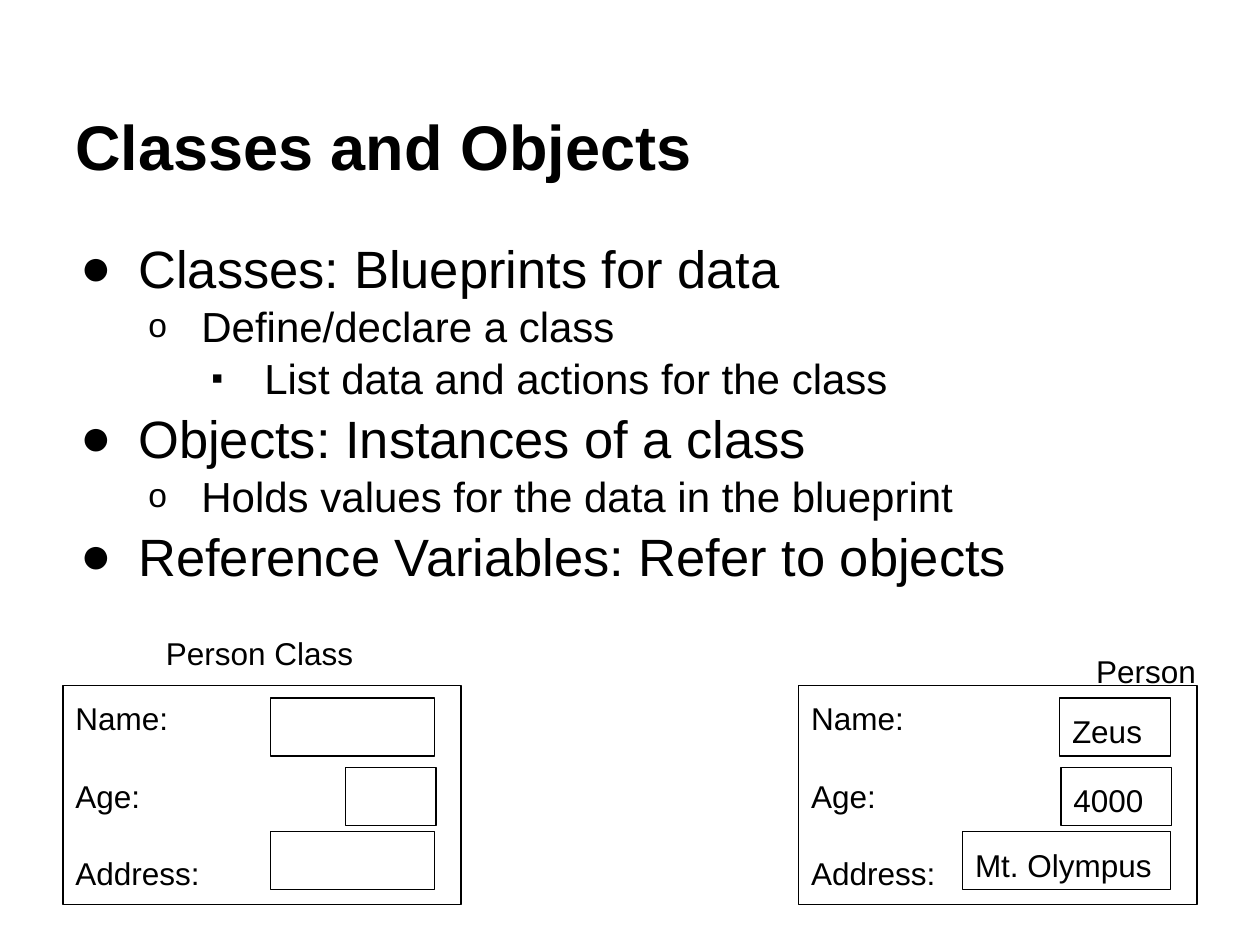
from dataclasses import dataclass
from typing import Optional

from lxml.etree import SubElement
from pptx import Presentation
from pptx.dml.color import RGBColor
from pptx.enum.shapes import MSO_SHAPE
from pptx.enum.text import MSO_ANCHOR, PP_ALIGN
from pptx.oxml.ns import qn
from pptx.util import Inches, Pt


@dataclass(frozen=True)
class Theme:
    font: str = "Arial"
    ink: RGBColor = RGBColor(0, 0, 0)
    title: int = 36
    topic: int = 30
    detail: int = 24
    label: int = 18
    outline: float = 0.75
    line_spacing: float = 1.04
    inset: float = 0.1


@dataclass(frozen=True)
class Bullet:
    glyph: str
    left: float
    hanging: float
    size: int
    percent: int = 100


@dataclass(frozen=True)
class Field:
    left: float
    width: float
    value: str = ""


@dataclass(frozen=True)
class Card:
    left: float
    caption: str
    caption_box: tuple[float, float, float, float]
    fields: tuple[Field, ...]


THEME = Theme()
BULLETS = (
    Bullet("●", 0.5, 0.46, THEME.topic),
    Bullet("o", 1.0, 0.42, THEME.detail, 80),
    Bullet("▪", 1.5, 0.42, THEME.detail, 80),
)
OUTLINE = (
    (0, "Classes: Blueprints for data"),
    (1, "Define/declare a class"),
    (2, "List data and actions for the class"),
    (0, "Objects: Instances of a class"),
    (1, "Holds values for the data in the blueprint"),
    (0, "Reference Variables: Refer to objects"),
)
FIELD_NAMES = ("Name:", "Age:", "Address:")
FIELD_TOPS = (5.54, 6.09, 6.6)
FIELD_HEIGHT = 0.46
CARD_TOP, CARD_WIDTH, CARD_HEIGHT = 5.44, 3.16, 1.74
CARDS = (
    Card(0.5, "Person Class", (0.66, 4.92, 2.8, 0.53),
         (Field(2.15, 1.3), Field(2.74, 0.72), Field(2.15, 1.3))),
    Card(6.34, "Person", (8.6, 5.06, 0.99, 0.53),
         (Field(8.41, 0.88, "Zeus"), Field(8.42, 0.88, "4000"),
          Field(7.64, 1.65, "Mt. Olympus"))),
)


def prepare_frame(frame, anchor=MSO_ANCHOR.TOP) -> None:
    frame.word_wrap = True
    frame.vertical_anchor = anchor
    frame.margin_left = frame.margin_right = Inches(THEME.inset)
    frame.margin_top = frame.margin_bottom = Inches(THEME.inset)


def write(frame, text: str, *, size: int = THEME.label, bold: bool = False,
          align=PP_ALIGN.LEFT, gap: float = 0, bullet: Optional[Bullet] = None) -> None:
    """Fill the empty first paragraph, or append a further one."""
    first = frame.paragraphs[0]
    paragraph = frame.add_paragraph() if first.runs else first
    paragraph.alignment = align
    paragraph.line_spacing = THEME.line_spacing
    paragraph.space_before = Pt(gap)
    run = paragraph.add_run()
    run.text = text
    run.font.name = THEME.font
    run.font.size = Pt(size)
    run.font.bold = bold
    run.font.color.rgb = THEME.ink
    if bullet:
        add_bullet(paragraph, bullet)


def add_bullet(paragraph, bullet: Bullet) -> None:
    properties = paragraph._p.get_or_add_pPr()
    properties.set("marL", str(Inches(bullet.left)))
    properties.set("indent", str(-Inches(bullet.hanging)))
    colour = SubElement(properties, qn("a:buClr"))
    SubElement(colour, qn("a:srgbClr"), val=str(THEME.ink))
    SubElement(properties, qn("a:buSzPct"), val=str(bullet.percent * 1000))
    SubElement(properties, qn("a:buFont"), typeface=THEME.font)
    SubElement(properties, qn("a:buChar"), char=bullet.glyph)


def add_text_frame(shapes, left: float, top: float, width: float, height: float,
                   anchor=MSO_ANCHOR.TOP):
    box = shapes.add_textbox(Inches(left), Inches(top), Inches(width), Inches(height))
    prepare_frame(box.text_frame, anchor)
    return box.text_frame


def add_outlined_box(shapes, left: float, top: float, width: float, height: float):
    box = shapes.add_shape(MSO_SHAPE.RECTANGLE, Inches(left), Inches(top),
                           Inches(width), Inches(height))
    box.shadow.inherit = False
    box.fill.background()
    box.line.color.rgb = THEME.ink
    box.line.width = Pt(THEME.outline)
    prepare_frame(box.text_frame)
    return box.text_frame


def draw_card(slide, card: Card) -> None:
    """Draw a captioned record with one value box per field."""
    shapes = slide.shapes.add_group_shape().shapes
    labels = add_outlined_box(shapes, card.left, CARD_TOP, CARD_WIDTH, CARD_HEIGHT)
    for index, name in enumerate(FIELD_NAMES):
        write(labels, name, gap=21.6 if index else 0)
    for field, top in zip(card.fields, FIELD_TOPS):
        value = add_outlined_box(shapes, field.left, top, field.width, FIELD_HEIGHT)
        if field.value:
            write(value, field.value)
    write(add_text_frame(shapes, *card.caption_box), card.caption, align=PP_ALIGN.CENTER)


def main() -> None:
    presentation = Presentation()
    presentation.slide_width = Inches(10)
    presentation.slide_height = Inches(7.5)
    slide = presentation.slides.add_slide(presentation.slide_layouts[6])

    title = add_text_frame(slide.shapes, 0.5, 0.3, 9, 1.25, MSO_ANCHOR.BOTTOM)
    write(title, "Classes and Objects", size=THEME.title, bold=True)
    body = add_text_frame(slide.shapes, 0.5, 1.75, 9, 5.43)
    for level, text in OUTLINE:
        write(body, text, size=BULLETS[level].size, bullet=BULLETS[level])
    for card in CARDS:
        draw_card(slide, card)

    presentation.save("out.pptx")


if __name__ == "__main__":
    main()
